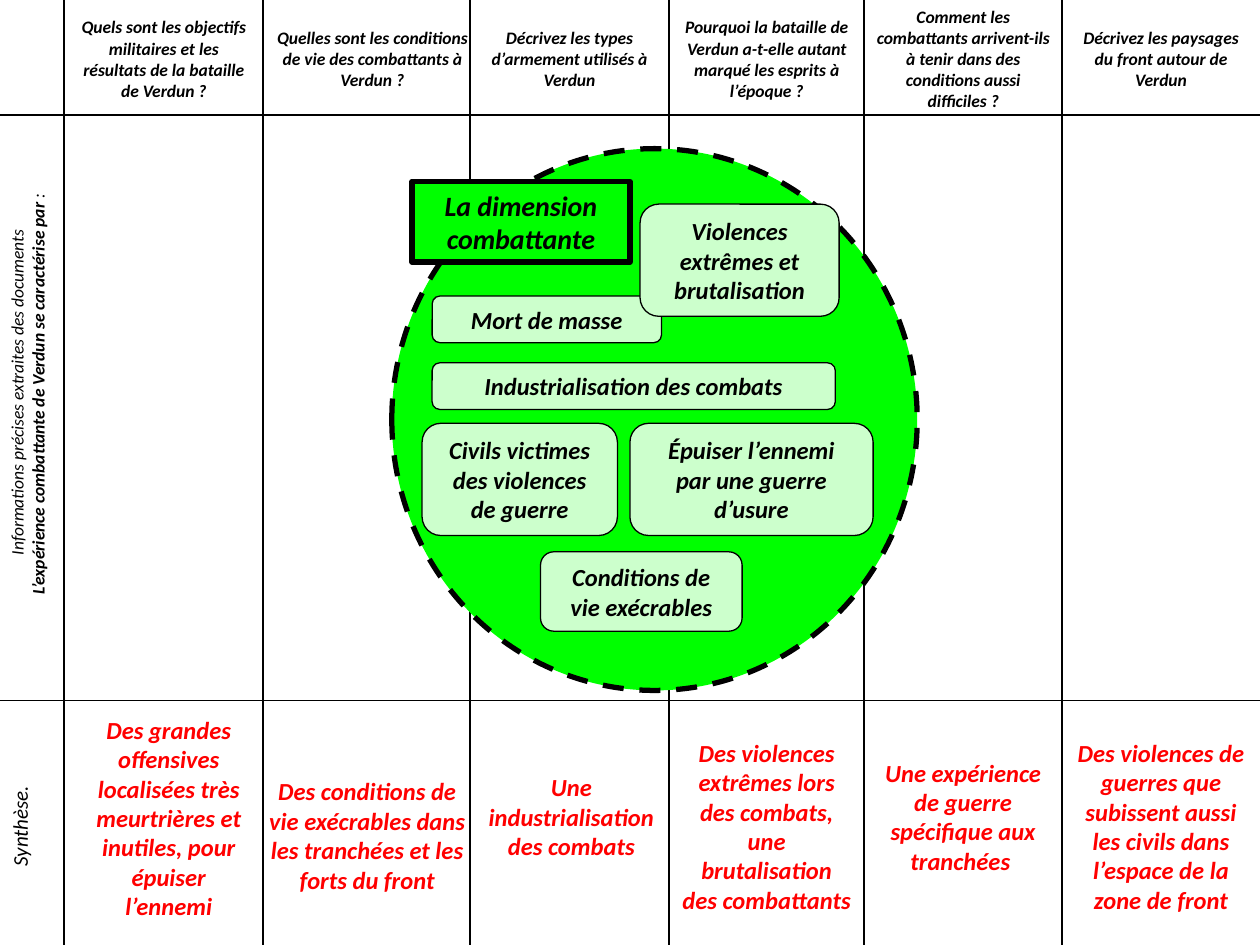
from lxml import etree
from pptx import Presentation
from pptx.dml.color import RGBColor
from pptx.enum.dml import MSO_LINE
from pptx.enum.shapes import MSO_CONNECTOR, MSO_SHAPE
from pptx.enum.text import MSO_ANCHOR, PP_ALIGN
from pptx.oxml.ns import qn
from pptx.util import Inches, Pt

TOP, MIDDLE = MSO_ANCHOR.TOP, MSO_ANCHOR.MIDDLE
CENTER = PP_ALIGN.CENTER
OVAL, RECT, ROUND = MSO_SHAPE.OVAL, MSO_SHAPE.RECTANGLE, MSO_SHAPE.ROUNDED_RECTANGLE
STRAIGHT, DASH = MSO_CONNECTOR.STRAIGHT, MSO_LINE.DASH
HEX = {"ink": "000000", "red": "FF0000", "green": "00FF00", "pale": "CCFFCC"}
COLOR = {name: RGBColor.from_string(code) for name, code in HEX.items()}

# Grid: column and row edges in inches
WIDE, HIGH = 10, 7.5
COLS = [0.51, 2.09, 3.73, 5.31, 6.86, 8.43, WIDE]
ROWS = [0.91, 5.56]

deck = Presentation()
deck.slide_width, deck.slide_height = Inches(WIDE), Inches(HIGH)
slide = deck.slides.add_slide(deck.slide_layouts[6])
shapes = slide.shapes


def write(shape, paras, size, color="ink", anchor=MIDDLE):
    """Fill a shape with centred italic paragraphs of (text, bold) runs."""
    frame = shape.text_frame
    frame.word_wrap = True
    frame.vertical_anchor = anchor
    for i, runs in enumerate(paras):
        para = frame.paragraphs[0] if i == 0 else frame.add_paragraph()
        para.alignment = CENTER
        for text, bold in runs:
            run = para.add_run()
            run.text = text
            font = run.font
            font.name, font.size = "Calibri", Pt(size)
            font.bold, font.italic = bold, True
            font.color.rgb = COLOR[color]


def draw(kind, box, fill, width):
    """Add a filled, outlined shape without shadow."""
    shape = shapes.add_shape(kind, *map(Inches, box))
    shape.shadow.inherit = False
    shape.fill.solid()
    shape.fill.fore_color.rgb = COLOR[fill]
    shape.line.color.rgb = COLOR["ink"]
    shape.line.width = Pt(width)
    return shape


# Summary row: text, shift left, extra width, top, height
sums = [
    ("Des grandes offensives localisées très meurtrières et inutiles, pour épuiser l’ennemi",
     0.08, -0.08, 5.56, 1.86),
    ("Des conditions de vie exécrables dans les tranchées et les forts du front",
     -0.08, 0.17, 5.56, 2.14),
    ("Une industrialisation des combats", -0.07, 0.17, 5.41, 2.14),
    ("Des violences extrêmes lors des combats, une brutalisation des combattants",
     0, 0, 5.56, 1.99),
    ("Une expérience de guerre spécifique aux tranchées ", 0, 0, 5.41, 2.14),
    ("Des violences de guerres que subissent aussi les civils dans l’espace de la zone de front",
     0, 0, 5.56, 1.99),
]
for left, right, (text, shift, extra, top, high) in zip(COLS, COLS[1:], sums):
    box = shapes.add_textbox(Inches(left + shift), Inches(top),
                             Inches(right - left + extra), Inches(high))
    write(box, [[(text, True)]], 14, "red")

# Row labels, turned to read upwards
labels = [
    ((-0.75, 6.34, 1.94, 0.43), 12, [[("Synthèse.", False)]]),
    ((-1.99, 2.9, 4.41, 0.43), 10, [
        [("Informations précises extraites des documents", False)],
        [("L’expérience combattante de Verdun se caractérise par", True), (" : ", False)],
    ]),
]
for place, size, paras in labels:
    box = shapes.add_textbox(*map(Inches, place))
    box.rotation = 270
    write(box, paras, size, anchor=TOP)

# Header row: question and extra width
heads = [
    ("Quels sont les objectifs militaires et les résultats de la bataille de Verdun ?", 0),
    ("Quelles sont les conditions de vie des combattants à Verdun ?", 0.09),
    ("Décrivez les types d’armement utilisés à Verdun", 0),
    ("Pourquoi la bataille de Verdun a-t-elle autant marqué les esprits à l’époque ?", 0),
    ("Comment les combattants arrivent-ils à tenir dans des conditions aussi difficiles ?", 0),
    ("Décrivez les paysages du front autour de Verdun", 0),
]
for left, right, (text, extra) in zip(COLS, COLS[1:], heads):
    box = shapes.add_textbox(Inches(left), 0, Inches(right - left + extra), Inches(0.93))
    write(box, [[(text, True)]], 10)

# Grid lines
lines = [(0, y, WIDE, y) for y in ROWS] + [(x, 0, x, HIGH) for x in COLS[:-1]]
for ends in lines:
    line = shapes.add_connector(STRAIGHT, *map(Inches, ends))
    line.line.color.rgb = COLOR["ink"]
    line.line.width = Pt(1)
    etree.SubElement(line._element.spPr, qn("a:effectLst"))

# Central circle and its title
disc = draw(OVAL, (3.11, 1.18, 4.17, 4.3), "green", 3)
disc.line.dash_style = DASH
name = draw(RECT, (3.27, 1.44, 1.73, 0.64), "green", 3)
write(name, [[("La dimension combattante", True)]], 16)

# Themes inside the circle
themes = [
    ((3.43, 2.88, 3.2, 0.37), ["Industrialisation des combats"]),
    ((4.29, 4.38, 1.6, 0.63), ["Conditions de vie exécrables"]),
    ((5, 3.36, 1.93, 0.89), ["Épuiser l’ennemi", "par une guerre d’usure"]),
    ((3.43, 2.35, 1.82, 0.37), ["Mort de masse"]),
    ((3.35, 3.36, 1.55, 0.89), ["Civils victimes des violences de guerre"]),
    ((5.08, 1.62, 1.58, 0.89), ["Violences extrêmes et brutalisation"]),
]
for place, texts in themes:
    card = draw(ROUND, place, "pale", 0.75)
    write(card, [[(text, True)] for text in texts], 14)

deck.save("out.pptx")
